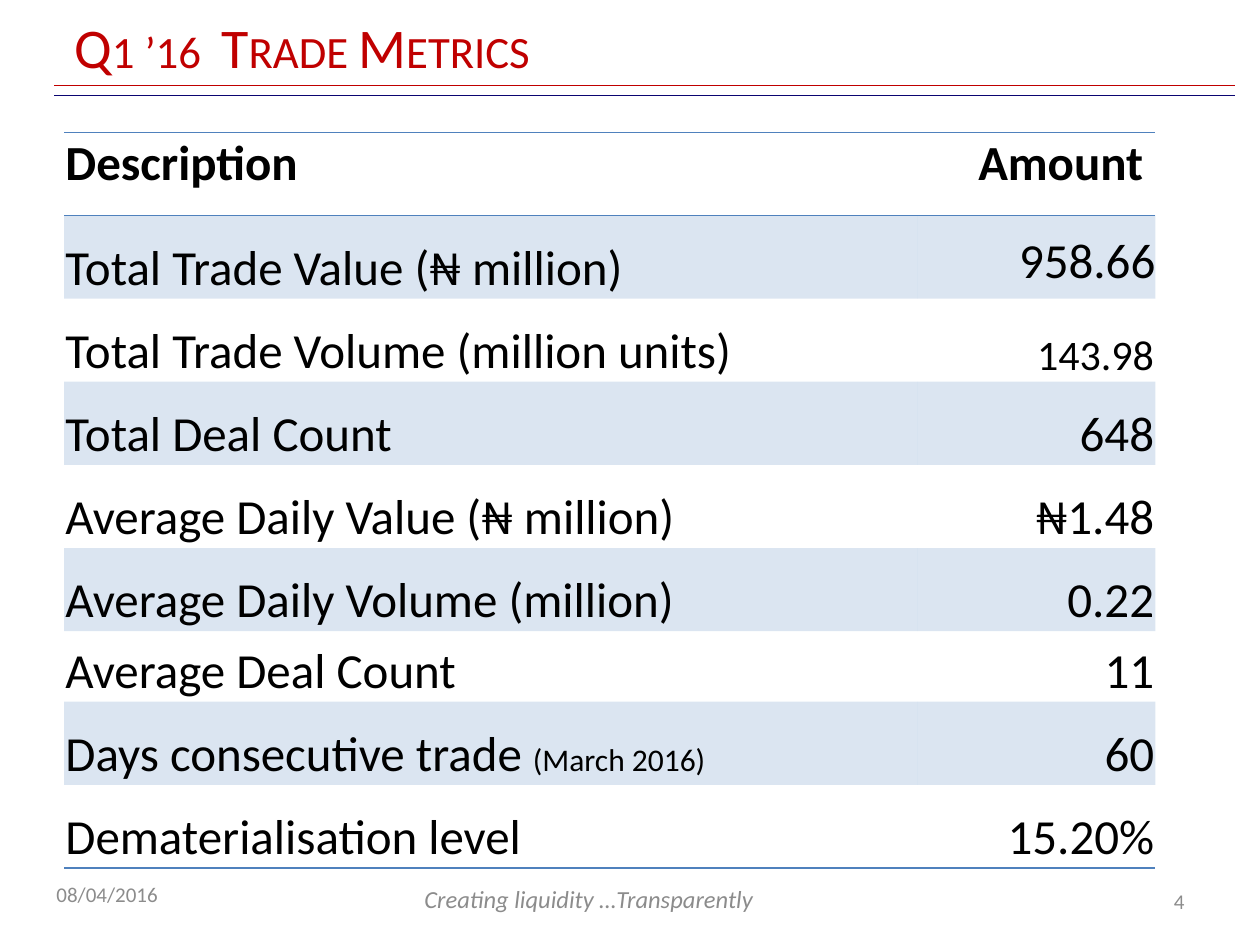
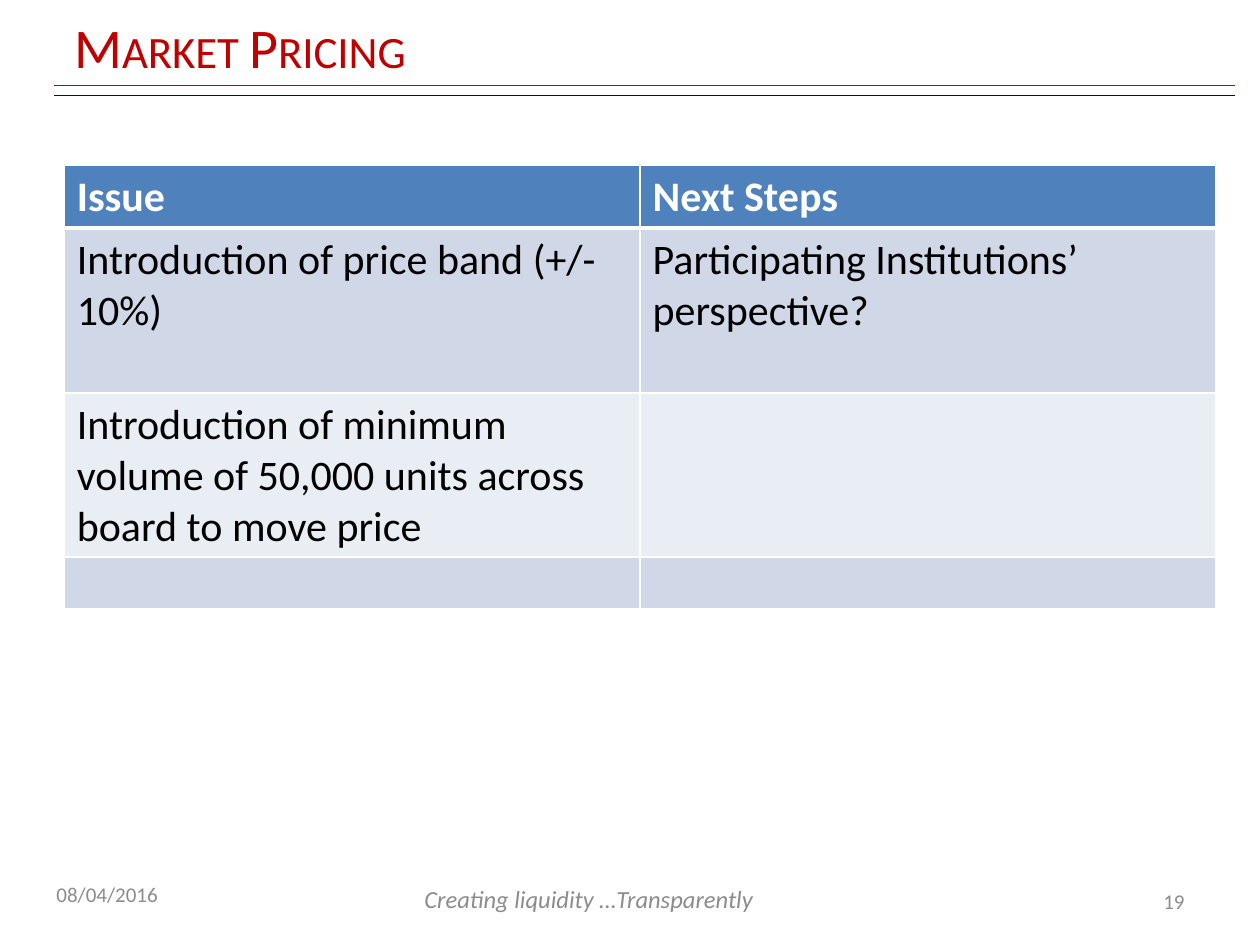
from dataclasses import dataclass

from lxml import etree
from pptx import Presentation
from pptx.dml.color import RGBColor
from pptx.enum.shapes import MSO_CONNECTOR
from pptx.enum.text import MSO_ANCHOR, PP_ALIGN
from pptx.oxml.ns import qn
from pptx.util import Inches, Pt

LEFT, RIGHT = PP_ALIGN.LEFT, PP_ALIGN.RIGHT
TOP, MIDDLE, BOTTOM = MSO_ANCHOR.TOP, MSO_ANCHOR.MIDDLE, MSO_ANCHOR.BOTTOM
STRAIGHT = MSO_CONNECTOR.STRAIGHT

FONT = "Calibri"
RED, NAVY, BLUE = "C00000", "0A0571", "4F81BD"
GREY, BLACK, WHITE = "8C8C8C", "000000", "FFFFFF"
BAND_DARK, BAND_LIGHT = "D0D8E8", "E9EDF4"
PLAIN_TABLE_STYLE = "{2D5ABB26-0587-4C30-8999-92F81FD0307C}"


@dataclass(frozen=True)
class Style:
    size: int
    color: str = BLACK
    bold: bool = False
    italic: bool = False
    small_caps: bool = False


@dataclass(frozen=True)
class Box:
    left: float
    top: float
    width: float
    height: float
    style: Style
    align: PP_ALIGN = LEFT
    anchor: MSO_ANCHOR = MIDDLE


@dataclass(frozen=True)
class Metric:
    name: str
    amount: str
    note: str = ""
    amount_size: int = 28
    spaced: bool = False
    amount_anchor: MSO_ANCHOR = BOTTOM
    height: float = 0.66


TITLE = Box(0.49, 0.06, 7.96, 0.61, Style(32, RED, small_caps=True))
MOTTO = Box(3.27, 6.97, 3.17, 0.4, Style(14, GREY, italic=True), anchor=TOP)
DATE = Box(0.35, 6.9, 2.33, 0.4, Style(12, GREY))
PAGE_NUMBER = Box(7.17, 6.95, 2.33, 0.4, Style(12, GREY), align=RIGHT)
TITLE_RULES = ((0.76, NAVY), (0.68, RED))

METRICS = (
    Metric("Total Trade Value (₦ million)", "958.66", spaced=True, amount_anchor=MIDDLE),
    Metric("Total Trade Volume (million units)", "143.98", amount_size=24),
    Metric("Total Deal Count", "648"),
    Metric("Average Daily Value (₦ million)", "₦1.48", spaced=True),
    Metric("Average Daily Volume (million)", "0.22"),
    Metric("Average Deal Count", "11", height=0.56),
    Metric("Days consecutive trade ", "60", note="(March 2016)"),
    Metric("Dematerialisation level", "15.20%"),
)

PRICING_ROWS = (
    (0.41, "Issue", "Next Steps"),
    (1.31, "Introduction of price band (+/- 10%)", "Participating Institutions’ perspective?"),
    (0.87, "Introduction of minimum volume of 50,000 units across board to move price", ""),
    (0.41, "", ""),
)


def rgb(color: str) -> RGBColor:
    return RGBColor.from_string(color)


def add_run(paragraph, text: str, style: Style) -> None:
    run = paragraph.add_run()
    run.text = text
    font = run.font
    font.name, font.size = FONT, Pt(style.size)
    font.bold, font.italic = style.bold, style.italic
    font.color.rgb = rgb(style.color)
    if style.small_caps:
        run._r.get_or_add_rPr().set("cap", "small")


def add_text(slide, box: Box, text: str) -> None:
    shape = slide.shapes.add_textbox(
        Inches(box.left), Inches(box.top), Inches(box.width), Inches(box.height))
    frame = shape.text_frame
    frame.word_wrap = True
    frame.vertical_anchor = box.anchor
    paragraph = frame.paragraphs[0]
    paragraph.alignment = box.align
    add_run(paragraph, text, box.style)


def add_rule(slide, top: float, color: str) -> None:
    connector = slide.shapes.add_connector(
        STRAIGHT, Inches(0.43), Inches(top), Inches(9.8), Inches(top))
    connector.line.color.rgb = rgb(color)
    connector.line.width = Pt(0.75)
    etree.SubElement(connector._element.spPr, qn("a:effectLst"))


def add_framed_slide(presentation, title: str, number: int):
    """Add a slide with its title, double rule and footers."""
    slide = presentation.slides.add_slide(presentation.slide_layouts[6])
    for top, color in TITLE_RULES:
        add_rule(slide, top, color)
    for box, text in (
        (MOTTO, "Creating liquidity …Transparently"),
        (DATE, "08/04/2016"),
        (PAGE_NUMBER, str(number)),
        (TITLE, title),
    ):
        add_text(slide, box, text)
    return slide


def add_plain_table(slide, left: float, top: float, widths: list[float], heights: list[float]):
    """Add a table whose style draws no fills or borders."""
    table = slide.shapes.add_table(
        len(heights), len(widths), Inches(left), Inches(top),
        Inches(sum(widths)), Inches(sum(heights))).table
    table.first_row = table.horz_banding = False
    table._tbl.tblPr.find(qn("a:tableStyleId")).text = PLAIN_TABLE_STYLE
    for column, width in zip(table.columns, widths):
        column.width = Inches(width)
    for row, height in zip(table.rows, heights):
        row.height = Inches(height)
    return table


def set_borders(cell, color: str, **widths: float) -> None:
    """Draw the sides L, R, T, B, named in that order, with widths in points."""
    properties = cell._tc.get_or_add_tcPr()
    for side, width in widths.items():
        line = etree.SubElement(properties, qn(f"a:ln{side}"), w=str(Pt(width)))
        fill = etree.SubElement(line, qn("a:solidFill"))
        etree.SubElement(fill, qn("a:srgbClr"), val=color)


def fill_cell(cell, color: str, opacity: int = 100) -> None:
    cell.fill.solid()
    cell.fill.fore_color.rgb = rgb(color)
    if opacity < 100:
        fill = cell._tc.tcPr.find(qn("a:solidFill"))
        etree.SubElement(fill[0], qn("a:alpha"), val=str(opacity * 1000))


def set_margins(cell, side: float) -> None:
    cell.margin_left = cell.margin_right = cell.margin_top = Inches(side)
    cell.margin_bottom = 0


def build_trade_metrics(presentation) -> None:
    slide = add_framed_slide(presentation, "Q1 ’16  Trade Metrics", 4)
    heights = [0.66] + [metric.height for metric in METRICS]
    table = add_plain_table(slide, 0.51, 1.05, [6.77, 1.89], heights)
    last = len(METRICS)

    for column, heading in enumerate(("Description", "Amount ")):
        cell = table.cell(0, column)
        set_margins(cell, 0.01)
        set_borders(cell, BLUE, T=1, B=1)
        add_run(cell.text_frame.paragraphs[0], heading, Style(28, bold=True))
        set_borders(table.cell(last, column), BLUE, B=1)

    for row, metric in enumerate(METRICS, start=1):
        name_cell, amount_cell = table.cell(row, 0), table.cell(row, 1)
        name_cell.vertical_anchor = BOTTOM
        amount_cell.vertical_anchor = metric.amount_anchor
        set_margins(name_cell, 0.01)
        set_margins(amount_cell, 0 if metric.amount_anchor == MIDDLE else 0.01)
        if row % 2:
            fill_cell(name_cell, BLUE, opacity=20)
            fill_cell(amount_cell, BLUE, opacity=20)

        name = name_cell.text_frame.paragraphs[0]
        add_run(name, metric.name, Style(28))
        if metric.note:
            add_run(name, metric.note, Style(18))
        amount = amount_cell.text_frame.paragraphs[0]
        if metric.spaced:
            amount.line_spacing, amount.space_after = 1.15, Pt(10)
        add_run(amount, metric.amount, Style(metric.amount_size))

    for row in range(last + 1):
        table.cell(row, 1).text_frame.paragraphs[0].alignment = RIGHT


def build_market_pricing(presentation) -> None:
    slide = add_framed_slide(presentation, "Market Pricing", 19)
    heights = [height for height, *_ in PRICING_ROWS]
    table = add_plain_table(slide, 0.51, 1.31, [4.57, 4.57], heights)
    for row, (_, *texts) in enumerate(PRICING_ROWS):
        is_header = row == 0
        style = Style(24, WHITE, bold=True) if is_header else Style(24)
        color = BLUE if is_header else BAND_DARK if row % 2 else BAND_LIGHT
        for column, text in enumerate(texts):
            cell = table.cell(row, column)
            set_borders(cell, WHITE, L=1, R=1, T=3 if row == 1 else 1, B=3 if is_header else 1)
            fill_cell(cell, color)
            if text:
                add_run(cell.text_frame.paragraphs[0], text, style)


def main() -> None:
    presentation = Presentation()
    presentation.slide_width, presentation.slide_height = Inches(10), Inches(7.5)
    build_trade_metrics(presentation)
    build_market_pricing(presentation)
    presentation.save("out.pptx")


if __name__ == "__main__":
    main()
